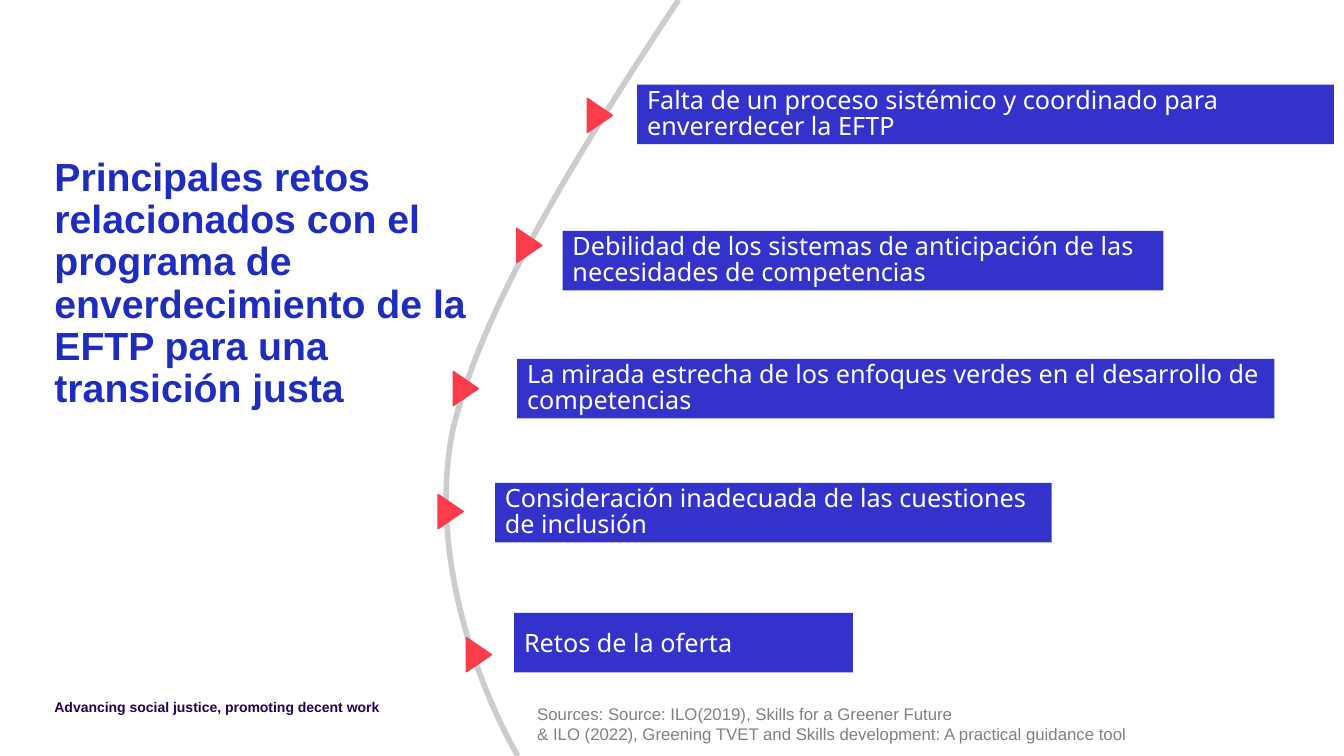
from lxml.etree import SubElement
from pptx import Presentation
from pptx.dml.color import RGBColor
from pptx.enum.shapes import MSO_SHAPE
from pptx.enum.text import MSO_ANCHOR, MSO_AUTO_SIZE, PP_ALIGN
from pptx.oxml.ns import qn
from pptx.util import Inches, Pt

COLORS = {"title": "1E2DBE", "motto": "230050", "curve": "CCCCCC", "bar": "3333CC",
          "mark": "FA3C4B", "white": "FFFFFF", "gray": "808080"}
TITLE = ("Principales retos relacionados con el programa de enverdecimiento "
         "de la EFTP para una transición justa")
MOTTO = "Advancing social justice, promoting decent work"
SOURCES = ["Sources: Source: ILO(2019), Skills for a Greener Future",
           "& ILO (2022), Greening TVET and Skills development: A practical guidance tool"]
# Text, bar left, top and width, marker left and top, line spacing
ITEMS = [
    ("Falta de un proceso sistémico y coordinado para envererdecer la EFTP",
     6.32, 0.84, 6.91, 5.78, 1.02, 0.88),
    ("Debilidad de los sistemas de anticipación de las necesidades de competencias",
     5.58, 2.29, 5.96, 5.08, 2.31, 0.88),
    ("La mirada estrecha de los enfoques verdes en el desarrollo de competencias",
     5.13, 3.56, 7.51, 4.45, 3.73, 0.88),
    ("Consideración inadecuada de las cuestiones de inclusión",
     4.91, 4.79, 5.52, 4.3, 4.95, 0.88),
    ("Retos de la oferta", 5.1, 6.08, 3.36, 4.58, 6.37, 1.0),
]
# Start point, then two controls and an end for each bend, as parts of the box
CURVE = [(1, 0), (0.57, 0.2), (0.15, 0.41), (0.03, 0.57),
         (-0.08, 0.74), (0.16, 0.92), (0.31, 1)]


def color(name):
    return RGBColor.from_string(COLORS[name])


def write(shape, lines, fmt, tint, anchor=MSO_ANCHOR.TOP, inset=None, space=None):
    frame = shape.text_frame
    frame.text = "\n".join(lines)
    look = {"word_wrap": True, "auto_size": MSO_AUTO_SIZE.NONE, "vertical_anchor": anchor}
    if inset is not None:
        for side in ("left", "top", "right", "bottom"):
            look["margin_" + side] = Inches(inset)
    for key, value in look.items():
        setattr(frame, key, value)
    for par in frame.paragraphs:
        par.alignment = PP_ALIGN.LEFT
        par.line_spacing = space
        for key, value in fmt.items():
            setattr(par.runs[0].font, key, value)
        par.runs[0].font.color.rgb = color(tint)


def add_title(slide, box):
    title = slide.shapes.title
    for key, value in zip(("left", "top", "width", "height"), box):
        setattr(title, key, Inches(value))
    write(title, [TITLE], {"name": "Arial", "size": Pt(28), "bold": True},
          "title", inset=0, space=0.9)


def add_curve(slide, box):
    left, top, width, height = box
    points = [(Inches(left + x * width), Inches(top + y * height)) for x, y in CURVE]
    pen = slide.shapes.build_freeform(*points[0])
    pen.add_line_segments(points[1:], close=False)
    curve = pen.convert_to_shape()
    curve.shadow.inherit = False
    curve.fill.background()
    curve.line.color.rgb = color("curve")
    curve.line.width = Pt(4)
    # Each three points become one bend
    route = next(curve.element.iter(qn("a:path")))
    steps = route.findall(qn("a:lnTo"))
    for start in range(0, len(steps), 3):
        bend = SubElement(route, qn("a:cubicBezTo"))
        for step in steps[start:start + 3]:
            bend.append(step[0])
            route.remove(step)


def add_shape(slide, kind, box, tint):
    shape = slide.shapes.add_shape(kind, *map(Inches, box))
    shape.shadow.inherit = False
    shape.fill.solid()
    shape.fill.fore_color.rgb = color(tint)
    shape.line.fill.background()
    return shape


def add_item(slide, text, left, top, width, mark_x, mark_y, space):
    bar = add_shape(slide, MSO_SHAPE.RECTANGLE, (left, top, width, 0.59), "bar")
    write(bar, [text], {"name": "Noto Sans", "size": Pt(18)}, "white",
          MSO_ANCHOR.MIDDLE, space=space)
    mark = add_shape(slide, MSO_SHAPE.ISOSCELES_TRIANGLE, (mark_x, mark_y, 0.34, 0.25), "mark")
    mark.rotation = 90
    mark.line.color.rgb = color("mark")
    mark.line.width = Pt(1)


def add_text(slide, box, *args, **look):
    write(slide.shapes.add_textbox(*map(Inches, box)), *args, **look)


def main():
    deck = Presentation()
    deck.slide_width, deck.slide_height = Inches(13.33), Inches(7.5)
    slide = deck.slides.add_slide(deck.slide_layouts[5])
    add_title(slide, (0.54, 1.56, 4.18, 0.79))
    add_curve(slide, (4.42, 0, 2.31, 7.5))
    for item in ITEMS:
        add_item(slide, *item)
    # Footer texts
    add_text(slide, (0.54, 6.93, 6.13, 0.2), [MOTTO],
             {"name": "Arial", "size": Pt(10), "bold": True}, "motto", inset=0)
    add_text(slide, (5.23, 6.93, 6.76, 0.5), SOURCES,
             {"name": "Arial", "size": Pt(12)}, "gray", anchor=MSO_ANCHOR.MIDDLE)
    deck.save("out.pptx")


if __name__ == "__main__":
    main()
